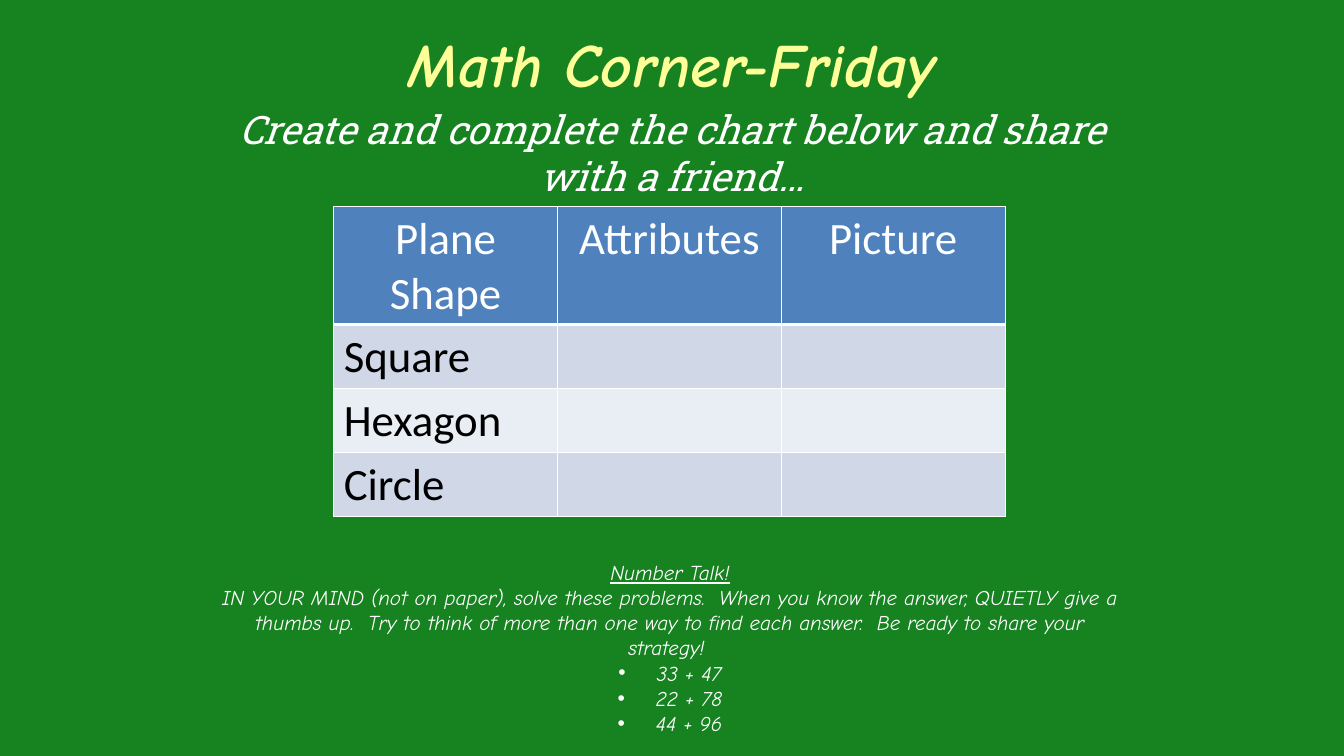
from dataclasses import dataclass

from lxml import etree
from pptx import Presentation
from pptx.dml.color import RGBColor
from pptx.enum.text import MSO_ANCHOR, PP_ALIGN
from pptx.oxml.ns import qn
from pptx.util import Inches, Pt

CENTER, LEFT = PP_ALIGN.CENTER, PP_ALIGN.LEFT
MIDDLE = MSO_ANCHOR.MIDDLE


@dataclass(frozen=True)
class Theme:
    board: str = "168220"
    chalk: str = "FFFFFF"
    title: str = "FFFF99"
    ink: str = "000000"
    header: str = "4F81BD"
    bands: tuple = ("D0D8E8", "E9EDF4")
    hand_font: str = "Comic Neue"
    slab_font: str = "Roboto Slab"
    table_font: str = "Calibri"
    title_size: int = 44
    table_size: int = 32
    prompt_size: int = 28
    talk_size: int = 15


theme = Theme()


def write(paragraph, text, *, font, size, color=theme.chalk, align=CENTER,
          bold=False, italic=True, underline=False, bullet=False):
    paragraph.alignment = align
    if bullet:
        properties = paragraph._p.get_or_add_pPr()
        properties.set("marL", str(Inches(0.38)))
        properties.set("indent", str(-Inches(0.38)))
        etree.SubElement(properties, qn("a:buFont"), typeface="Arial")
        etree.SubElement(properties, qn("a:buChar"), char="•")
    span = paragraph.add_run()
    span.text = text
    span.font.name = font
    span.font.size = Pt(size)
    span.font.color.rgb = RGBColor.from_string(color)
    span.font.bold = bold
    span.font.italic = italic
    span.font.underline = underline


def set_borders(cell, color, **widths):
    """Draw the cell's sides; widths are points keyed by L, R, T and B."""
    properties = cell._tc.get_or_add_tcPr()
    for index, (side, width) in enumerate(widths.items()):
        line = etree.Element(qn(f"a:ln{side}"), w=str(Pt(width)))
        fill = etree.SubElement(line, qn("a:solidFill"))
        etree.SubElement(fill, qn("a:srgbClr"), val=color)
        properties.insert(index, line)


deck = Presentation()
deck.slide_width = Inches(13.33)
deck.slide_height = Inches(7.5)
page = deck.slides.add_slide(deck.slide_layouts[5])
page.background.fill.solid()
page.background.fill.fore_color.rgb = RGBColor.from_string(theme.board)

# Title
title = page.shapes.title
title.left, title.top = Inches(2.17), Inches(0)
title.width, title.height = Inches(9), Inches(1.25)
title.text_frame.vertical_anchor = MIDDLE
write(title.text_frame.paragraphs[0], "Math Corner-Friday", font=theme.hand_font,
      size=theme.title_size, color=theme.title, bold=True)

# Number talk
talk = page.shapes.add_textbox(Inches(2.06), Inches(5.5), Inches(9.17), Inches(1.87))
talk.text_frame.word_wrap = True
talk_lines = [
    ("Number Talk!", {"underline": True}),
    ("IN YOUR MIND (not on paper), solve these problems.  When you know the answer, "
     "QUIETLY give a thumbs up.  Try to think of more than one way to find each answer.  "
     "Be ready to share your strategy! ", {}),
    ("33 + 47", {"bullet": True}),
    ("22 + 78", {"bullet": True}),
    ("44 + 96", {"bullet": True}),
]
for index, (text, style) in enumerate(talk_lines):
    frame = talk.text_frame
    paragraph = frame.add_paragraph() if index else frame.paragraphs[0]
    write(paragraph, text, font=theme.hand_font, size=theme.talk_size, **style)

# Shape chart
rows = [
    ("Plane Shape", "Attributes", "Picture"),
    ("Square", "", ""),
    ("Hexagon", "", ""),
    ("Circle", "", ""),
]
table = page.shapes.add_table(len(rows), 3, Inches(3.31), Inches(2.05),
                              Inches(6.67), Inches(3.07)).table
for column in table.columns:
    column.width = Inches(2.22)
for row_index, row in enumerate(rows):
    is_header = row_index == 0
    table.rows[row_index].height = Inches(1.17 if is_header else 0.63)
    fill = theme.header if is_header else theme.bands[(row_index - 1) % 2]
    for column_index, text in enumerate(row):
        cell = table.cell(row_index, column_index)
        cell.fill.solid()
        cell.fill.fore_color.rgb = RGBColor.from_string(fill)
        set_borders(cell, theme.chalk, L=1, R=1, T=3 if row_index == 1 else 1,
                    B=3 if is_header else 1)
        if text:
            write(cell.text_frame.paragraphs[0], text, font=theme.table_font,
                  size=theme.table_size, italic=False,
                  color=theme.chalk if is_header else theme.ink,
                  align=CENTER if is_header else LEFT)

# Prompt
prompt = page.shapes.add_textbox(Inches(1.83), Inches(1), Inches(9.67), Inches(1.04))
prompt.text_frame.word_wrap = True
write(prompt.text_frame.paragraphs[0],
      "Create and complete the chart below and share with a friend…",
      font=theme.slab_font, size=theme.prompt_size)

deck.save("out.pptx")
